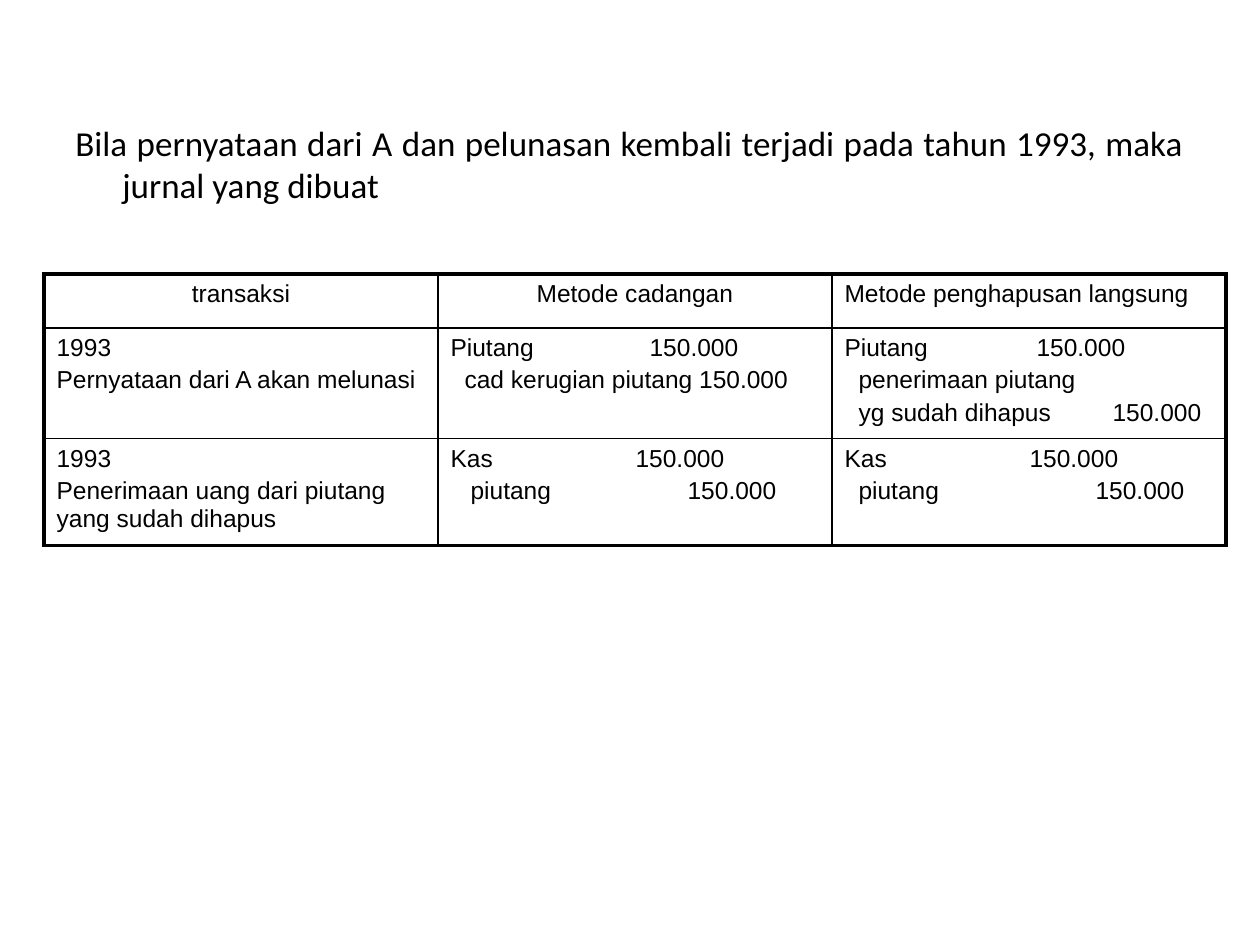
import pptx
import pptx.dml.color
import pptx.enum.text
import pptx.oxml.ns
import pptx.util
from lxml import etree

PX = 914400 / 126
BLACK = pptx.dml.color.RGBColor(0, 0, 0)
ALIGN = pptx.enum.text.PP_ALIGN
THICK = 2.25
THIN = 1

COLUMN_WIDTH = 394
ROW_HEIGHTS = [54, 107, 107]
HEADERS = [
    ("transaksi", ALIGN.CENTER),
    ("Metode cadangan", ALIGN.CENTER),
    ("Metode penghapusan langsung", ALIGN.LEFT),
]
JOURNAL = [
    [
        [("1993", []), ("Pernyataan dari A akan melunasi", [])],
        [("Piutang\t150.000", [199]), ("\tcad kerugian piutang 150.000", [14])],
        [
            ("Piutang\t150.000", [192]),
            ("\tpenerimaan piutang", [14]),
            ("\tyg sudah dihapus\t150.000", [14, 268]),
        ],
    ],
    [
        [("1993", []), ("Penerimaan uang dari piutang yang sudah dihapus", [])],
        [("Kas\t150.000", [185]), ("\tpiutang\t150.000", [20, 237])],
        [("Kas\t150.000", [185]), ("\tpiutang\t150.000", [14, 251])],
    ],
]


def px(length):
    return pptx.util.Emu(round(length * PX))


def add_child(parent, name, **attributes):
    child = etree.SubElement(parent, pptx.oxml.ns.qn(name))
    for key, value in attributes.items():
        child.set(key, str(value))
    return child


def write_paragraph(para, text, font, size, align, stops=()):
    para.alignment = align
    properties = para._p.get_or_add_pPr()
    add_child(add_child(properties, "a:spcBef"), "a:spcPct", val=20000)
    if stops:
        tabs = add_child(properties, "a:tabLst")
        for stop in stops:
            add_child(tabs, "a:tab", pos=px(stop), algn="l")
    span = para.add_run()
    span.text = text
    span.font.name = font
    span.font.size = pptx.util.Pt(size)
    span.font.color.rgb = BLACK


def add_statement(page, text):
    box = page.shapes.add_textbox(px(63), px(115), px(1133), px(129))
    box.text_frame.word_wrap = True
    para = box.text_frame.paragraphs[0]
    write_paragraph(para, text, "Calibri", 20, ALIGN.JUSTIFY)
    properties = para._p.get_or_add_pPr()
    properties.set("marL", str(px(47)))
    properties.set("indent", str(px(-47)))


def set_borders(cell, widths):
    properties = cell._tc.get_or_add_tcPr()
    for side, width in widths.items():
        line = add_child(properties, f"a:ln{side}", w=pptx.util.Pt(width))
        add_child(add_child(line, "a:solidFill"), "a:srgbClr", val=BLACK)


def fill_cell(cell, lines, align):
    frame = cell.text_frame
    for index, (text, stops) in enumerate(lines):
        para = frame.add_paragraph() if index else frame.paragraphs[0]
        write_paragraph(para, text, "Arial", 14, align, stops)


def add_journal_table(page):
    row_count, column_count = len(ROW_HEIGHTS), len(HEADERS)
    frame = page.shapes.add_table(
        row_count, column_count, px(44), px(274),
        px(COLUMN_WIDTH * column_count), px(sum(ROW_HEIGHTS)),
    )
    table = frame.table
    table.first_row = False
    table.horz_banding = False
    for column in table.columns:
        column.width = px(COLUMN_WIDTH)
    for row, height in zip(table.rows, ROW_HEIGHTS):
        row.height = px(height)

    for column, (text, align) in enumerate(HEADERS):
        fill_cell(table.cell(0, column), [(text, [])], align)
    for row, entries in enumerate(JOURNAL, start=1):
        for column, lines in enumerate(entries):
            fill_cell(table.cell(row, column), lines, ALIGN.LEFT)

    for row in range(row_count):
        for column in range(column_count):
            cell = table.cell(row, column)
            set_borders(cell, {
                "L": THICK if column == 0 else THIN,
                "R": THICK if column == column_count - 1 else THIN,
                "T": THICK if row == 0 else THIN,
                "B": THICK if row == row_count - 1 else THIN,
            })
            cell.fill.background()


def main():
    deck = pptx.Presentation()
    deck.slide_width = px(1260)
    deck.slide_height = px(945)
    page = deck.slides.add_slide(deck.slide_layouts[6])
    add_statement(
        page,
        "Bila pernyataan dari A dan pelunasan kembali terjadi pada tahun 1993, "
        "maka jurnal yang dibuat",
    )
    add_journal_table(page)
    deck.save("out.pptx")


if __name__ == "__main__":
    main()
